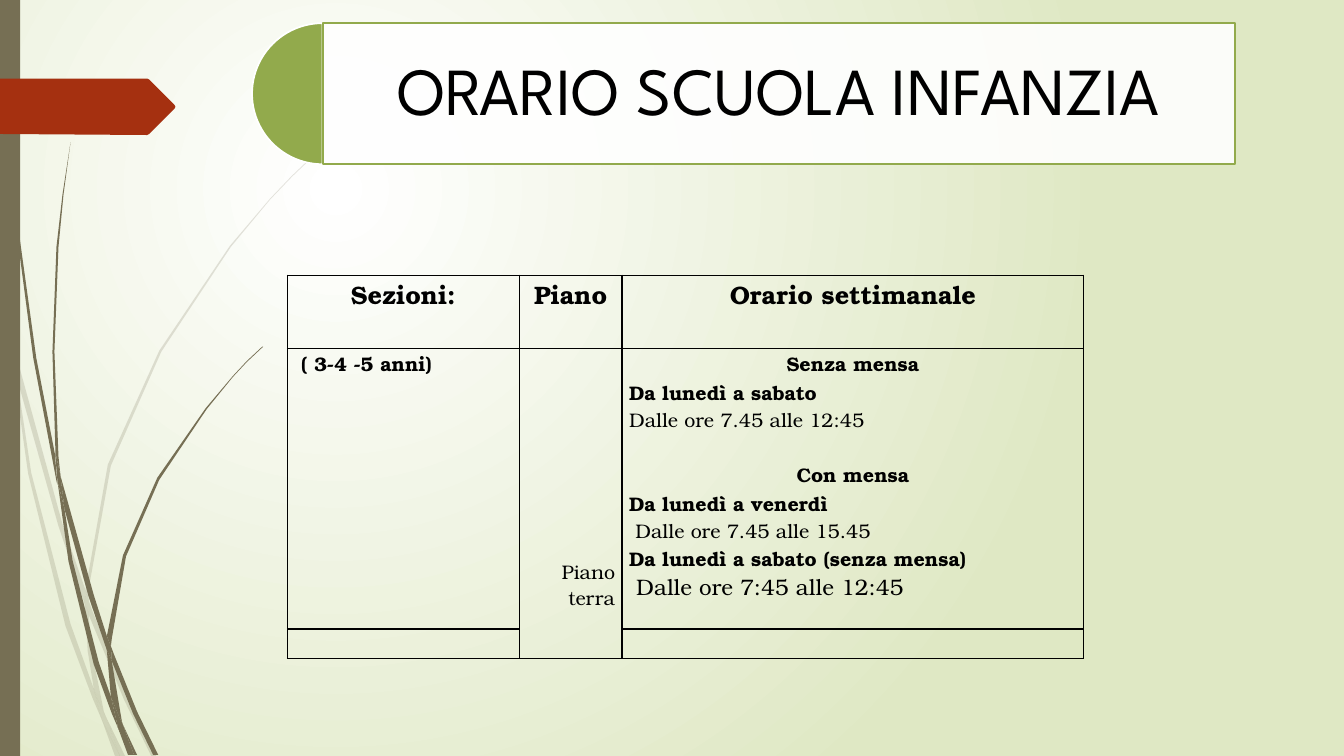
import pptx
import pptx.dml.color
import pptx.enum.shapes
import pptx.enum.text
import pptx.oxml
import pptx.oxml.ns
import pptx.util

PX = 9144  # EMU per px, 100 px to the inch
OLIVE, GREEN, RED, WHITE, BLACK = "766F54", "92AA4C", "A53010", "FFFFFF", "000000"
SERIF = "TeX Gyre Bonum"
LEFT, CENTER, RIGHT = (pptx.enum.text.PP_ALIGN[name] for name in ("LEFT", "CENTER", "RIGHT"))
SHAPE = pptx.enum.shapes.MSO_SHAPE

PALE_GRASS = [
    [(11, 350), (9, 322), (0, 282), (0, 299), (10, 344)],
    [(58, 522), (84, 599), (85, 586), (62, 520), (14, 345), (17, 376)],
    [(92, 607), (88, 596), (88, 610), (123, 694), (150, 750), (155, 750), (127, 692)],
    [(119, 750), (124, 750), (105, 711)],
    [(93, 683), (70, 619), (31, 469), (17, 376), (11, 350), (28, 470), (65, 621),
     (92, 693), (101, 714), (99, 707)],
    [(84, 599), (87, 646), (93, 683), (96, 692), (105, 711), (103, 706), (91, 646),
     (88, 610), (88, 608)],
    [(88, 584), (110, 462), (160, 349), (229, 245), (268, 198), (290, 175), (312, 154),
     (312, 153), (289, 175), (268, 197), (228, 244), (158, 348), (107, 461), (85, 584),
     (85, 586), (88, 596)],
    [(101, 714), (114, 750), (119, 750)],
    [(88, 608), (88, 610), (88, 596), (85, 586), (84, 599)],
    [(96, 692), (93, 683), (99, 707), (101, 714), (119, 750), (105, 711)],
]
DARK_GRASS = [
    [(7, 110), (17, 233), (33, 355), (56, 477), (57, 481), (55, 457), (55, 453), (36, 355),
     (19, 232), (8, 109), (5, 48), (4, 0), (3, 0), (4, 48)],
    [(88, 592), (106, 645), (106, 633), (106, 631), (93, 590), (60, 472), (64, 505)],
    [(113, 649), (110, 641), (111, 656), (132, 708), (152, 749), (157, 749), (136, 706)],
    [(110, 691), (98, 657), (72, 556), (64, 505), (57, 477), (68, 557), (93, 659),
     (111, 708), (117, 722), (116, 717)],
    [(60, 472), (58, 453), (54, 349), (58, 245), (63, 193), (70, 141), (62, 193), (56, 245),
     (52, 349), (55, 449)],
    [(133, 749), (136, 749), (122, 719)],
    [(57, 477), (64, 505), (60, 472), (55, 449), (55, 453)],
    [(111, 633), (125, 552), (158, 476), (205, 406), (231, 374), (245, 359), (261, 344),
     (260, 344), (245, 358), (231, 373), (204, 405), (156, 474), (122, 551), (106, 631),
     (110, 641)],
    [(117, 722), (127, 749), (131, 749)],
    [(106, 645), (110, 691), (116, 706), (122, 719), (121, 716), (111, 656), (109, 651)],
    [(106, 645), (109, 651), (111, 656), (110, 641), (106, 631), (106, 633)],
    [(116, 706), (110, 691), (116, 717), (117, 722), (130, 749), (133, 749), (122, 719)],
]
RED_TAB = [(0, 78), (146, 78), (148, 79), (173, 104), (174, 106), (173, 108), (148, 133),
           (146, 134), (0, 133)]

COLUMNS, ROWS = [230, 102, 458], [73, 278, 29]
HEADINGS = ["Sezioni:", "Piano", "Orario settimanale"]
# text, alignment, size, bold, space before
TIMETABLE = [
    ("Senza mensa", CENTER, 14, True, 0),
    ("Da lunedì a sabato", LEFT, 14, True, 0),
    ("Dalle ore 7.45 alle 12:45", LEFT, 14, False, 0),
    ("Con mensa", CENTER, 14, True, 19.5),
    ("Da lunedì a venerdì", LEFT, 14, True, 0),
    (" Dalle ore 7.45 alle 15.45", LEFT, 14, False, 0),
    ("Da lunedì a sabato (senza mensa)", LEFT, 14, True, 0),
    (" Dalle ore 7:45 alle 12:45", LEFT, 16, False, 0),
]


def rgb(value):
    return pptx.dml.color.RGBColor.from_string(value)


def xml(tag, inner="", **attributes):
    settings = "".join(f' {name}="{value}"' for name, value in attributes.items())
    namespace = pptx.oxml.ns.nsdecls("a")
    return pptx.oxml.parse_xml(f"<a:{tag} {namespace}{settings}>{inner}</a:{tag}>")


def paint(shape, fill, line=None, opacity=100):
    shape.shadow.inherit = False
    shape.fill.solid()
    shape.fill.fore_color.rgb = rgb(fill)
    if opacity < 100:
        colour = shape.element.spPr.find(".//" + pptx.oxml.ns.qn("a:srgbClr"))
        colour.append(xml("alpha", val=opacity * 1000))
    if line:
        shape.line.color.rgb = rgb(line)
        shape.line.width = pptx.util.Pt(1.25)
    else:
        shape.line.fill.background()


def add_background(page):
    """Radial gradient whose bright centre lies in the upper left quarter."""
    fill = page.background.fill
    fill.gradient()
    for stop, colour in zip(fill.gradient_stops, (WHITE, "DFE8C4")):
        stop.color.rgb = rgb(colour)
    gradient = page.element.find(".//" + pptx.oxml.ns.qn("a:gradFill"))
    gradient.remove(gradient.find(pptx.oxml.ns.qn("a:lin")))
    gradient.append(xml("path", '<a:fillToRect l="50000" t="50000" r="100000" b="100000"/>',
                        path="circle"))


def add_outline(shapes, points, fill, opacity=100):
    builder = shapes.build_freeform(*points[0], scale=PX)
    builder.add_line_segments(points[1:], close=True)
    paint(builder.convert_to_shape(), fill, opacity=opacity)


def add_preset(shapes, kind, place, fill, line=None, opacity=100):
    shape = shapes.add_shape(kind, *(length * PX for length in place))
    paint(shape, fill, line, opacity)
    return shape


def style(para, align, size, bold, font=SERIF):
    para.alignment = align
    para.font.size = pptx.util.Pt(size)
    para.font.name = font
    para.font.bold = bold
    para.font.color.rgb = rgb(BLACK)


def add_title(page):
    shapes = page.shapes.add_group_shape().shapes
    pie = add_preset(shapes, SHAPE.PIE, (250, 23, 140, 140), GREEN, WHITE)
    pie.adjustments[0], pie.adjustments[1] = 54, 162
    box = add_preset(shapes, SHAPE.RECTANGLE, (320, 23, 905, 140), WHITE, GREEN, 90)
    frame = box.text_frame
    frame.word_wrap = True
    frame.vertical_anchor = pptx.enum.text.MSO_ANCHOR.MIDDLE
    frame.margin_left = frame.margin_right = frame.margin_top = frame.margin_bottom = 20 * PX
    para = frame.paragraphs[0]
    para.text = "ORARIO SCUOLA INFANZIA"
    para.line_spacing = 0.9
    style(para, CENTER, 48, False, "League Spartan")


def format_cell(cell):
    """Clear the fill, set the margins and draw a black border all round."""
    cell.fill.background()
    cell.margin_left = cell.margin_right = 7 * PX
    cell.margin_top = cell.margin_bottom = 0
    properties = cell._tc.get_or_add_tcPr()
    for index, side in enumerate("LRTB"):
        line = f'<a:solidFill><a:srgbClr val="{BLACK}"/></a:solidFill>'
        properties.insert(index, xml("ln" + side, line, w=12700))
    style(cell.text_frame.paragraphs[0], LEFT, 14, False)


def write_cell(cell, lines):
    frame = cell.text_frame
    for index, (text, align, size, bold, before) in enumerate(lines):
        para = frame.add_paragraph() if index else frame.paragraphs[0]
        para.text = text
        if before:
            para.space_before = pptx.util.Pt(before)
        style(para, align, size, bold)


def add_timetable(page):
    place = (285, 273, sum(COLUMNS), sum(ROWS))
    table = page.shapes.add_table(len(ROWS), len(COLUMNS),
                                  *(length * PX for length in place)).table
    table.first_row = table.horz_banding = False
    for column, width in zip(table.columns, COLUMNS):
        column.width = width * PX
    for row, height in zip(table.rows, ROWS):
        row.height = height * PX
    for cell in table.iter_cells():
        format_cell(cell)
    for index, heading in enumerate(HEADINGS):
        write_cell(table.cell(0, index), [(heading, CENTER, 18, True, 0)])
    write_cell(table.cell(1, 0), [(" ( 3-4 -5 anni)", LEFT, 14, True, 0)])
    write_cell(table.cell(1, 2), TIMETABLE)
    floor = table.cell(1, 1)
    floor.merge(table.cell(2, 1))
    floor.margin_top = 208 * PX
    write_cell(floor, [("Piano terra", RIGHT, 14, False, 0)])


def main():
    deck = pptx.Presentation()
    deck.slide_width, deck.slide_height = 1333 * PX, 750 * PX
    page = deck.slides.add_slide(deck.slide_layouts[6])
    add_background(page)
    for blades, opacity in ((PALE_GRASS, 20), (DARK_GRASS, 100)):
        group = page.shapes.add_group_shape()
        for blade in blades:
            add_outline(group.shapes, blade, OLIVE, opacity)
    add_preset(page.shapes, SHAPE.RECTANGLE, (0, 0, 20, 750), OLIVE)
    add_outline(page.shapes, RED_TAB, RED)
    add_title(page)
    add_timetable(page)
    deck.save("out.pptx")


if __name__ == "__main__":
    main()
